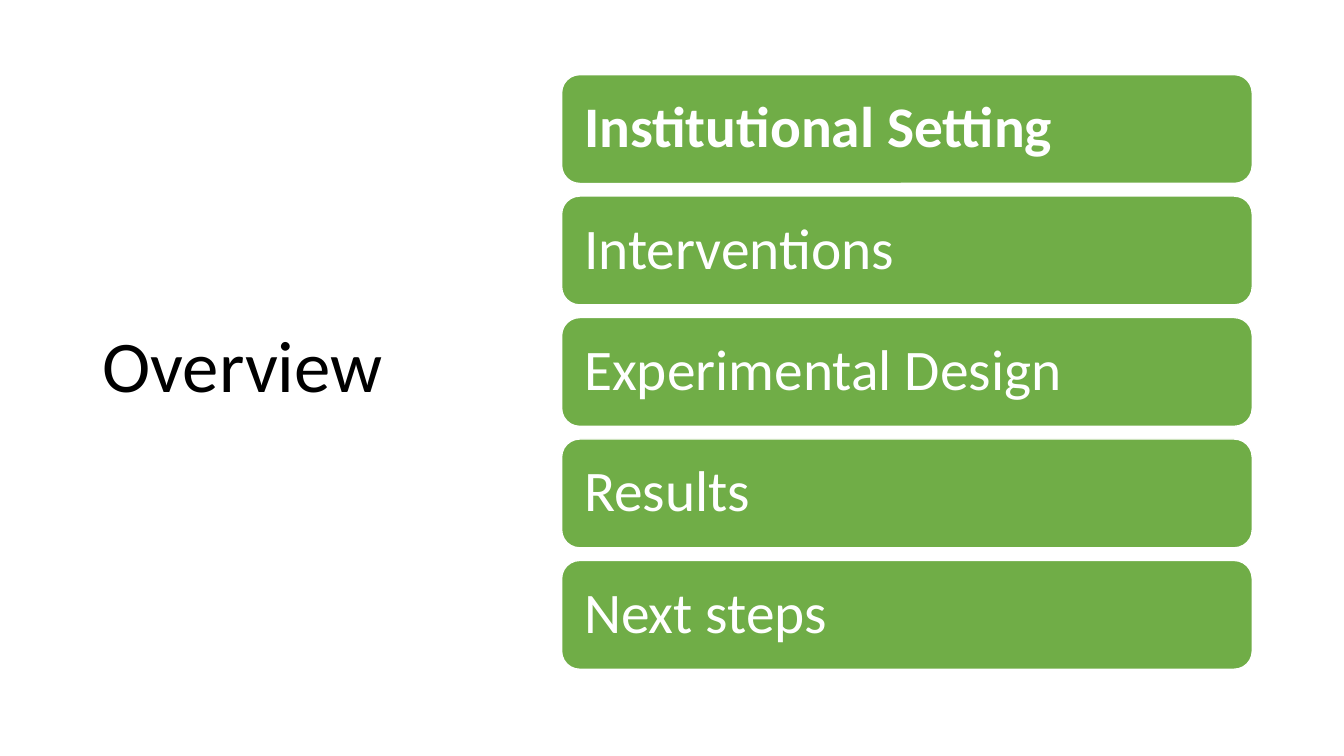
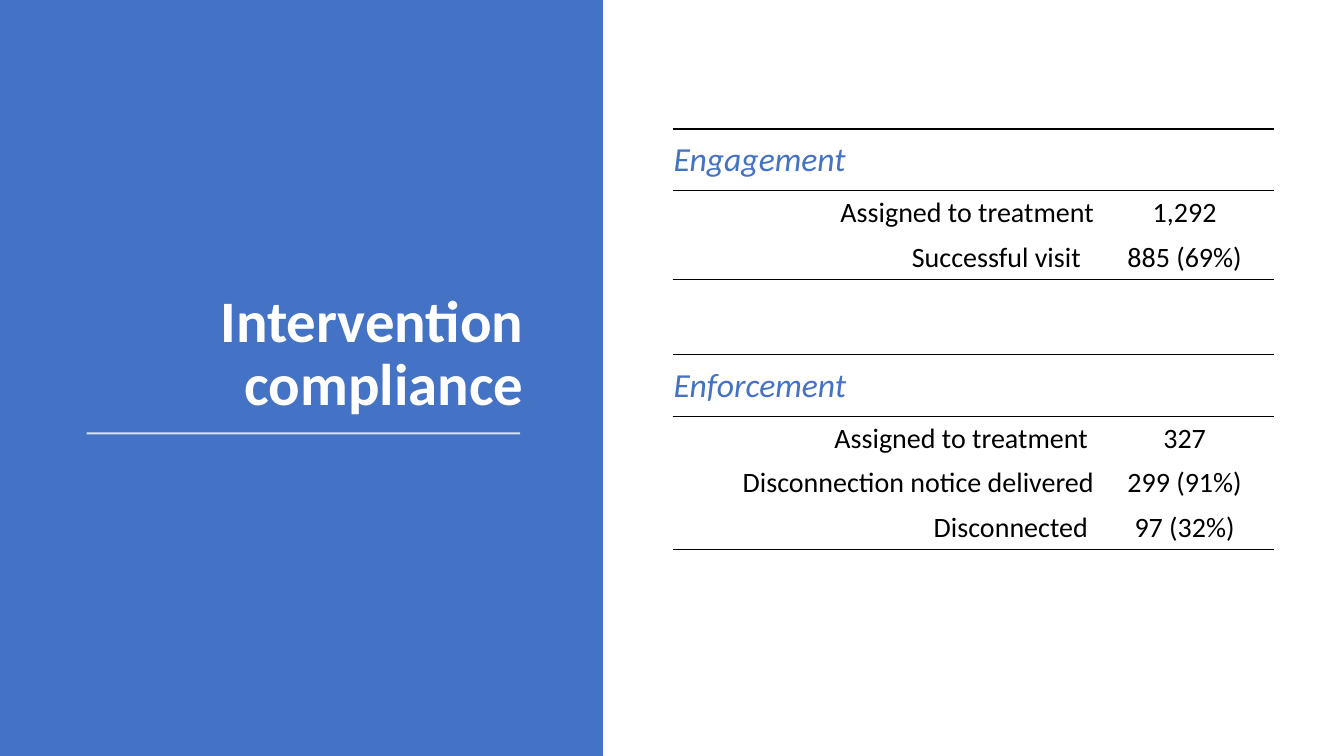
from dataclasses import dataclass

from lxml.etree import SubElement
from pptx import Presentation
from pptx.dml.color import RGBColor
from pptx.enum.shapes import MSO_CONNECTOR, MSO_SHAPE
from pptx.enum.text import MSO_ANCHOR, PP_ALIGN
from pptx.oxml.ns import qn
from pptx.util import Inches, Pt


@dataclass(frozen=True)
class Theme:
    """Colours and type sizes of the deck."""
    font: str = "Calibri"
    black: RGBColor = RGBColor(0x00, 0x00, 0x00)
    white: RGBColor = RGBColor(0xFF, 0xFF, 0xFF)
    blue: RGBColor = RGBColor(0x44, 0x72, 0xC4)
    green: RGBColor = RGBColor(0x70, 0xAD, 0x47)
    overview_size: int = 52
    title_size: int = 42
    bar_size: int = 41
    heading_size: int = 24
    body_size: int = 20


class DeckBuilder:
    def __init__(self, theme):
        self.theme = theme
        self.deck = Presentation()
        self.deck.slide_width, self.deck.slide_height = Inches(13.33), Inches(7.5)
        self.page = None

    def new_page(self):
        self.page = self.deck.slides.add_slide(self.deck.slide_layouts[6])

    def set_text(self, frame, text, size, color, align=PP_ALIGN.LEFT,
                 bold=False, italic=False, line_spacing=None):
        para = frame.paragraphs[0]
        para.text = text
        para.alignment = align
        para.line_spacing = line_spacing
        font = para.font
        font.name, font.size, font.color.rgb = self.theme.font, Pt(size), color
        font.bold, font.italic = bold, italic

    def title(self, box, text, size, color, anchor=MSO_ANCHOR.MIDDLE, **style):
        frame = self.page.shapes.add_textbox(*map(Inches, box)).text_frame
        frame.word_wrap = True
        frame.vertical_anchor = anchor
        self.set_text(frame, text, size, color, line_spacing=0.9, **style)

    def block(self, box, color, kind=MSO_SHAPE.RECTANGLE):
        shape = self.page.shapes.add_shape(kind, *map(Inches, box))
        shape.shadow.inherit = False
        shape.fill.solid()
        shape.fill.fore_color.rgb = color
        shape.line.fill.background()
        return shape

    def bar(self, box, text, bold):
        bar = self.block(box, self.theme.green, MSO_SHAPE.ROUNDED_RECTANGLE)
        bar.line.color.rgb = self.theme.white
        bar.line.width = Pt(1)
        frame = bar.text_frame
        frame.word_wrap = True
        frame.vertical_anchor = MSO_ANCHOR.MIDDLE
        frame.margin_left = frame.margin_right = Inches(0.17)
        self.set_text(frame, text, self.theme.bar_size, self.theme.white,
                      bold=bold, line_spacing=0.9)

    def rule(self, left, right, top, color, opacity):
        rule = self.page.shapes.add_connector(
            MSO_CONNECTOR.STRAIGHT, *map(Inches, (left, top, right, top)))
        rule.line.color.rgb = color
        rule.line.width = Pt(1.5)
        properties = rule._element.spPr
        fill = next(properties.iter(qn("a:srgbClr")))
        SubElement(fill, qn("a:alpha"), val=str(opacity * 1000))
        SubElement(properties, qn("a:effectLst"))

    def border(self, cell, sides):
        """Draw black lines on the named sides and clear the others."""
        properties = cell._tc.get_or_add_tcPr()
        for side in "LRTB":
            line = SubElement(properties, qn(f"a:ln{side}"), w=str(Pt(1)))
            if side in sides:
                fill = SubElement(line, qn("a:solidFill"))
                SubElement(fill, qn("a:srgbClr"), val=str(self.theme.black))
            else:
                SubElement(line, qn("a:noFill"))

    def ruled_table(self, left, top, widths, rows, heights, ruled_edges):
        """Rows are (label, value, right indent); a row without value is a heading.

        Edge n is the line above row n.
        """
        theme = self.theme
        table = self.page.shapes.add_table(
            len(rows), len(widths), Inches(left), Inches(top),
            Inches(sum(widths)), Inches(sum(heights))).table
        table.first_row = table.horz_banding = False
        for column, width in zip(table.columns, widths):
            column.width = Inches(width)
        for index, (label, value, indent) in enumerate(rows):
            table.rows[index].height = Inches(heights[index])
            sides = ("T" if index in ruled_edges else "") + (
                "B" if index + 1 in ruled_edges else "")
            label_cell, value_cell = table.cell(index, 0), table.cell(index, 1)
            for cell in (label_cell, value_cell):
                self.border(cell, sides)
                cell.fill.background()
                cell.vertical_anchor = MSO_ANCHOR.MIDDLE
                cell.margin_left = cell.margin_right = cell.margin_top = Inches(0.01)
                cell.margin_bottom = 0
            if value:
                label_cell.margin_right = Inches(0.01 + indent)
                self.set_text(label_cell.text_frame, label, theme.body_size,
                              theme.black, PP_ALIGN.RIGHT)
                self.set_text(value_cell.text_frame, value, theme.body_size,
                              theme.black, PP_ALIGN.CENTER)
            elif label:
                self.set_text(label_cell.text_frame, label, theme.heading_size,
                              theme.blue, italic=True)


def overview_page(builder):
    theme = builder.theme
    builder.new_page()
    builder.title((0.92, 0.61, 3.69, 6.09), "Overview", theme.overview_size, theme.black)

    # Agenda bars, evenly spread; the current topic is bold
    topics = ["Institutional Setting", "Interventions", "Experimental Design",
              "Results", "Next steps"]
    first_top, last_top, height = 0.74, 5.56, 1.08
    pitch = (last_top - first_top) / (len(topics) - 1)
    for index, topic in enumerate(topics):
        builder.bar((5.57, first_top + index * pitch, 6.85, height), topic, index == 0)


def compliance_page(builder):
    theme = builder.theme
    builder.new_page()

    # Title panel
    builder.block((0, 0, 5.98, 7.5), theme.blue)
    builder.title((0.69, 0.88, 4.6, 3.32), "Intervention compliance", theme.title_size,
                  theme.white, MSO_ANCHOR.BOTTOM, align=PP_ALIGN.RIGHT, bold=True)
    builder.rule(0.86, 5.16, 4.3, theme.white, 80)

    # Compliance figures
    rows = [
        ("Engagement", "", 0),
        ("Assigned to treatment", "1,292", 0),
        ("Successful visit", "885 (69%)", 0.13),
        ("", "", 0),
        ("Enforcement", "", 0),
        ("Assigned to treatment", "327", 0.06),
        ("Disconnection notice delivered", "299 (91%)", 0),
        ("Disconnected", "97 (32%)", 0.06),
    ]
    heights = [0.44 if value else 0.61 if label else 0.75 for label, value, _ in rows]
    builder.ruled_table(6.67, 1.28, (4.19, 1.78), rows, heights,
                        ruled_edges={0, 1, 3, 4, 5, 8})


def main():
    builder = DeckBuilder(Theme())
    overview_page(builder)
    compliance_page(builder)
    builder.deck.save("out.pptx")


if __name__ == "__main__":
    main()
